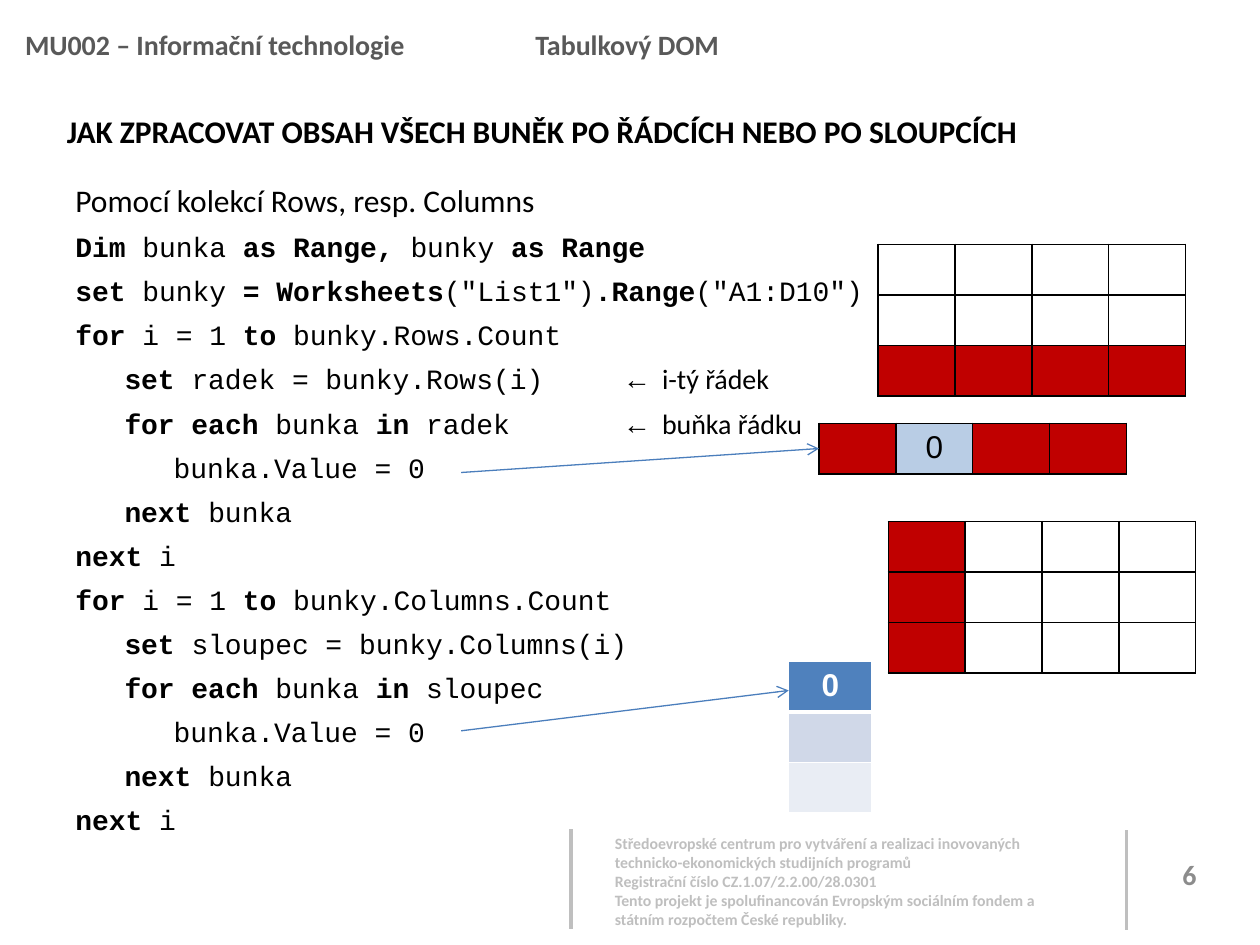
from lxml import etree
from pptx import Presentation
from pptx.dml.color import RGBColor
from pptx.enum import shapes, text
from pptx.oxml import ns
from pptx.util import Inches, Pt

RED, BLACK, WHITE, GREY = "C00000", "000000", "FFFFFF", "BFBFBF"
CODE_INDENT = 0.39
CELL_WIDTH, CELL_HEIGHT = 0.61, 0.4

# Indent level, code with *bold* parts, and an optional remark.
CODE = [
    (0, "*Dim *bunka* as Range, *bunky *as Range*", ""),
    (0, '*set *bunky* = Worksheets*("List1")*.Range*("A1:D10")', ""),
    (0, "*for *i = 1 *to *bunky.Rows.Count", ""),
    (1, "*set *radek = bunky.Rows(i)\t← ", "i-tý řádek"),
    (1, "*for each *bunka *in *radek\t← ", "buňka řádku"),
    (2, "bunka.Value = 0", ""),
    (1, "*next *bunka", ""),
    (0, "*next *i", ""),
    (0, "*for *i = 1 *to *bunky.Columns.Count", ""),
    (1, "*set *sloupec = bunky.Columns(i)", ""),
    (1, "*for each *bunka *in *sloupec", ""),
    (2, "bunka.Value = 0", ""),
    (1, "*next *bunka", ""),
    (0, "*next *i", ""),
]
FOOTER = [
    "Středoevropské centrum pro vytváření a realizaci inovovaných "
    "technicko-ekonomických studijních programů",
    "Registrační číslo CZ.1.07/2.2.00/28.0301",
    "Tento projekt je spolufinancován Evropským sociálním fondem a "
    "státním rozpočtem České republiky.",
]


def colour(value):
    return RGBColor.from_string(value)


def add_run(paragraph, words, size, fill=BLACK, bold=False, name="Calibri"):
    run = paragraph.add_run()
    run.text = words
    run.font.size = Pt(size)
    run.font.name = name
    run.font.bold = bold
    run.font.color.rgb = colour(fill)


def set_indent_and_tabs(paragraph, indent=0):
    """Indent the whole paragraph and put its tab stops one inch apart."""
    properties = paragraph._p.get_or_add_pPr()
    properties.set("marL", str(Inches(indent)))
    properties.set("indent", "0")
    properties.set("defTabSz", str(Inches(1)))


def add_text_box(slide, left, top, width, height, inset=None):
    box = slide.shapes.add_textbox(Inches(left), Inches(top), Inches(width), Inches(height))
    frame = box.text_frame
    frame.word_wrap = True
    if inset is not None:
        frame.margin_left = frame.margin_right = Inches(inset)
        frame.margin_top = frame.margin_bottom = Inches(inset)
    return frame


def add_title(slide, words):
    title = slide.shapes.title
    title.left, title.top = Inches(0.43), Inches(0.84)
    title.width, title.height = Inches(9.21), Inches(0.4)
    frame = title.text_frame
    frame.auto_size = text.MSO_AUTO_SIZE.NONE
    frame.vertical_anchor = text.MSO_ANCHOR.TOP
    paragraph = frame.paragraphs[0]
    paragraph.alignment = text.PP_ALIGN.LEFT
    add_run(paragraph, words, 18, bold=True)


def add_code(slide):
    frame = add_text_box(slide, 0.5, 1.39, 9, 5.31)
    add_run(frame.paragraphs[0], "Pomocí kolekcí Rows, resp. Columns", 18)
    for level, code, remark in CODE:
        paragraph = frame.add_paragraph()
        paragraph.space_before = Pt(6)
        set_indent_and_tabs(paragraph, level * CODE_INDENT)
        for index, part in enumerate(code.split("*")):
            if part:
                add_run(paragraph, part, 16, bold=index % 2 == 1, name="Courier New")
        if remark:
            add_run(paragraph, remark, 16)


def add_line(slide, start, end, fill, width, arrow=False):
    points = [Inches(value) for value in (*start, *end)]
    line = slide.shapes.add_connector(shapes.MSO_CONNECTOR.STRAIGHT, *points)
    line.line.color.rgb = colour(fill)
    line.line.width = Pt(width)
    if arrow:
        etree.SubElement(line.line._get_or_add_ln(), ns.qn("a:tailEnd"), type="arrow")
    etree.SubElement(line._element.spPr, ns.qn("a:effectLst"))


def set_borders(cell, fill, widths):
    """Draw the left, right, top and bottom borders, in points."""
    properties = cell._tc.get_or_add_tcPr()
    for side, width in zip("LRTB", widths):
        line = etree.SubElement(properties, ns.qn(f"a:ln{side}"), w=str(Pt(width)))
        solid = etree.SubElement(line, ns.qn("a:solidFill"))
        etree.SubElement(solid, ns.qn("a:srgbClr"), val=fill)


def add_grid(slide, left, top, fills, border=BLACK, width=CELL_WIDTH, header_rule=1):
    """Add a table coloured by rows of fills, where None leaves a cell empty."""
    rows, columns = len(fills), len(fills[0])
    table = slide.shapes.add_table(
        rows, columns, Inches(left), Inches(top),
        Inches(columns * width), Inches(rows * CELL_HEIGHT)).table
    table.first_row = table.horz_banding = False
    for row, row_fills in enumerate(fills):
        for column, fill in enumerate(row_fills):
            cell = table.cell(row, column)
            above = header_rule if row == 1 else 1
            below = header_rule if row == 0 else 1
            set_borders(cell, border, (1, 1, above, below))
            if fill:
                cell.fill.solid()
                cell.fill.fore_color.rgb = colour(fill)
            else:
                cell.fill.background()
    return table


def write_cell(cell, words, fill=BLACK, bold=False):
    paragraph = cell.text_frame.paragraphs[0]
    paragraph.alignment = text.PP_ALIGN.CENTER
    add_run(paragraph, words, 18, fill, bold, "Arial")


def add_tables(slide):
    add_grid(slide, 6.97, 1.94, [[None] * 4, [None] * 4, [RED] * 4])
    row_table = add_grid(slide, 6.5, 3.36, [[RED, "B9CDE5", RED, RED]])
    write_cell(row_table.cell(0, 1), "0")
    add_grid(slide, 7.05, 4.14, [[RED, None, None, None]] * 3)
    column_table = add_grid(slide, 6.26, 5.25, [["4F81BD"], ["D0D8E8"], ["E9EDF4"]],
                            WHITE, 0.66, header_rule=3)
    write_cell(column_table.cell(0, 0), "0", WHITE, True)


def add_header(slide):
    paragraph = add_text_box(slide, 0.1, 0.04, 9.55, 0.46).paragraphs[0]
    set_indent_and_tabs(paragraph)
    paragraph.line_spacing = 1.5
    add_run(paragraph, "MU002 – Informační technologie \t Tabulkový DOM", 16, "595959", True)


def add_footer(slide):
    frame = add_text_box(slide, 4.84, 6.58, 3.54, 0.84, inset=0.04)
    for index, words in enumerate(FOOTER):
        paragraph = frame.add_paragraph() if index else frame.paragraphs[0]
        add_run(paragraph, words, 9, GREY, True)
    number = add_text_box(slide, 9.1, 6.74, 0.68, 0.4)
    number.vertical_anchor = text.MSO_ANCHOR.MIDDLE
    number.paragraphs[0].alignment = text.PP_ALIGN.CENTER
    add_run(number.paragraphs[0], "6", 16, "8C8C8C", True)
    for left, top in ((4.53, 6.58), (8.94, 6.59)):
        add_line(slide, (left, top), (left, top + 0.79), GREY, 2)


def main():
    presentation = Presentation()
    presentation.slide_width, presentation.slide_height = Inches(10), Inches(7.5)
    slide = presentation.slides.add_slide(presentation.slide_layouts[5])
    add_footer(slide)
    add_code(slide)
    add_title(slide, "JAK ZPRACOVAT OBSAH VŠECH BUNĚK PO ŘÁDCÍCH NEBO PO SLOUPCÍCH")
    add_tables(slide)
    for start, end in (((3.66, 5.8), (6.26, 5.48)), ((3.66, 3.75), (6.5, 3.56))):
        add_line(slide, start, end, "4B7EBC", 0.75, arrow=True)
    add_header(slide)
    presentation.save("out.pptx")


if __name__ == "__main__":
    main()
